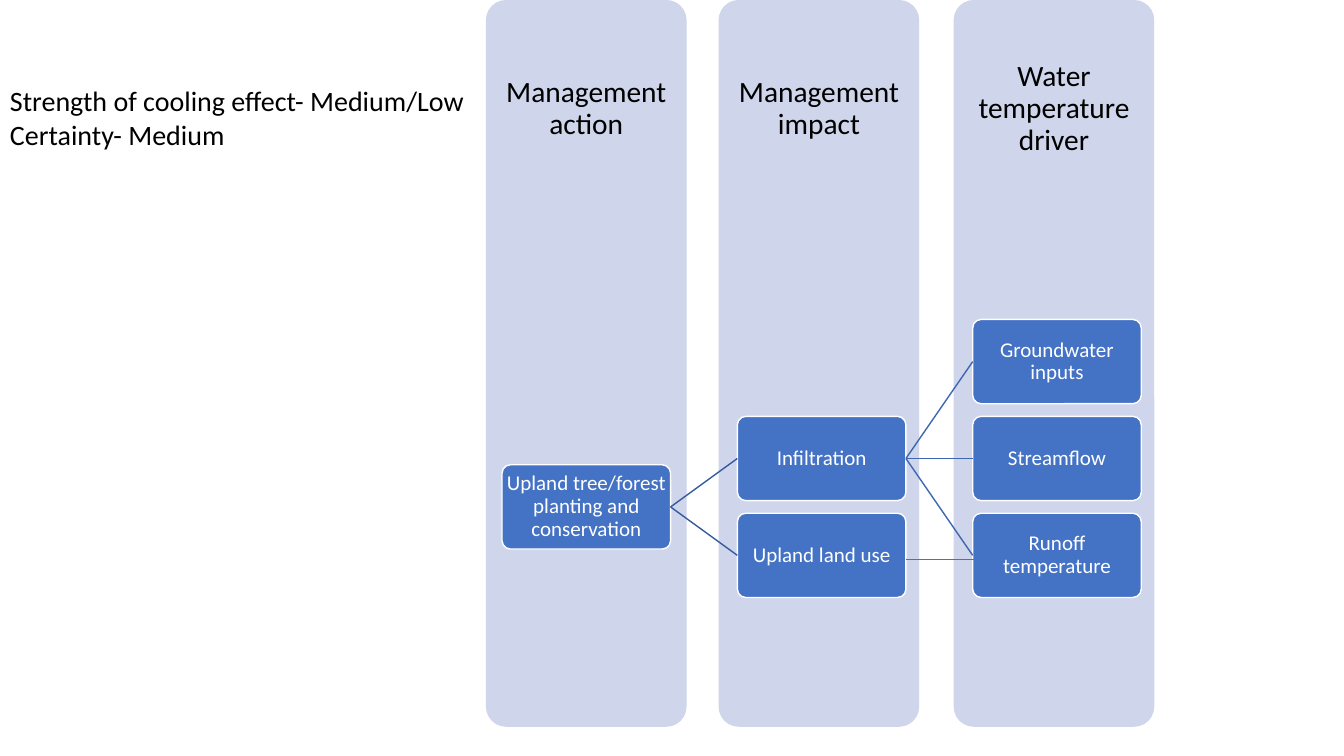
from pptx import Presentation
from pptx.dml.color import RGBColor
from pptx.enum.shapes import MSO_CONNECTOR as Connector, MSO_SHAPE as Shape
from pptx.enum.text import MSO_ANCHOR as Anchor, PP_ALIGN as Align
from pptx.oxml.ns import qn
from pptx.util import Pt
from lxml.etree import SubElement

RIGHT, LEFT = 3, 1


def color(value):
    return RGBColor.from_string(value)


def assign(target, formats):
    for name, value in formats.items():
        setattr(target, name, value)


class Diagram:
    font = "Calibri"
    column_fill = "CFD5EA"
    node_fill = "4472C4"
    white = "FFFFFF"
    black = "000000"

    def __init__(self, page):
        self.page = page

    def fill_text(self, box, lines, size, ink, margin, align, **layout):
        sides = ("left", "top", "right", "bottom")
        frame = box.text_frame
        assign(frame, {f"margin_{side}": Pt(inset) for side, inset in zip(sides, margin)})
        assign(frame, {"word_wrap": True, **layout})
        for index, line in enumerate(lines):
            para = frame.add_paragraph() if index else frame.paragraphs[0]
            para.alignment = align
            if align == Align.CENTER:
                para.line_spacing = 0.9
            span = para.add_run()
            span.text = line
            assign(span.font, {"name": self.font, "size": Pt(size)})
            span.font.color.rgb = color(ink)

    def label(self, lines, place, size, margin, align, **layout):
        box = self.page.shapes.add_textbox(*map(Pt, place))
        self.fill_text(box, lines, size, self.black, margin, align, **layout)

    def panel(self, place, fill, outline=None):
        box = self.page.shapes.add_shape(Shape.ROUNDED_RECTANGLE, *map(Pt, place))
        box.adjustments[0] = 0.1
        box.shadow.inherit = False
        box.fill.solid()
        box.fill.fore_color.rgb = color(fill)
        if outline:
            box.line.color.rgb = color(outline)
            box.line.width = Pt(1)
        else:
            box.line.fill.background()
        return box

    def column(self, title, left):
        self.panel((left, 0, 143.3, 519.1), self.column_fill)
        self.label([title], (left, 0, 143.3, 155.7), 21, [11.5] * 4,
                   Align.CENTER, vertical_anchor=Anchor.MIDDLE)

    def node(self, title, left, top):
        box = self.panel((left, top, 120.4, 60.2), self.node_fill, self.white)
        self.fill_text(box, [title], 15, self.white, [0.9] * 4, Align.CENTER,
                       vertical_anchor=Anchor.MIDDLE)
        return box

    def line(self, ends, ink, width):
        link = self.page.shapes.add_connector(Connector.STRAIGHT, *map(Pt, ends))
        link.line.color.rgb = color(ink)
        link.line.width = Pt(width)
        SubElement(link._element.spPr, qn("a:effectLst"))
        return link

    def join(self, source, target, ink):
        link = self.line((0, 0, 0, 0), ink, 1)
        link.begin_connect(source, RIGHT)
        link.end_connect(target, LEFT)


COLUMNS = [
    ("Management action", 347.1),
    ("Management impact", 513.3),
    ("Water temperature driver", 681.2),
]
NODES = [
    ("Upland tree/forest planting and conservation", 0, 1.5),
    ("Infiltration", 1, 1),
    ("Upland land use", 1, 2),
    ("Groundwater inputs", 2, 0),
    ("Streamflow", 2, 1),
    ("Runoff temperature", 2, 2),
]
LINKS = {
    "Upland tree/forest planting and conservation":
        ("365B9D", ["Infiltration", "Upland land use"]),
    "Infiltration":
        ("3E67B2", ["Groundwater inputs", "Streamflow", "Runoff temperature"]),
}


def main():
    deck = Presentation()
    assign(deck, {"slide_width": Pt(960), "slide_height": Pt(540)})
    diagram = Diagram(deck.slides.add_slide(deck.slide_layouts[6]))

    for title, left in COLUMNS:
        diagram.column(title, left)
    nodes = {
        title: diagram.node(title, 358.6 + 168.1 * stage, 228.2 + 69.2 * row)
        for title, stage, row in NODES
    }
    for source, (ink, targets) in LINKS.items():
        for target in targets:
            diagram.join(nodes[source], nodes[target], ink)
    diagram.line((646.9, 399.6, 696, 399.6), diagram.node_fill, 0.5)

    diagram.label(
        ["Strength of cooling effect- Medium/Low", "Certainty- Medium"],
        (0, 56.2, 342, 55.7), 20, (7.2, 3.6, 7.2, 3.6), Align.LEFT, word_wrap=False)
    deck.save("out.pptx")


if __name__ == "__main__":
    main()
